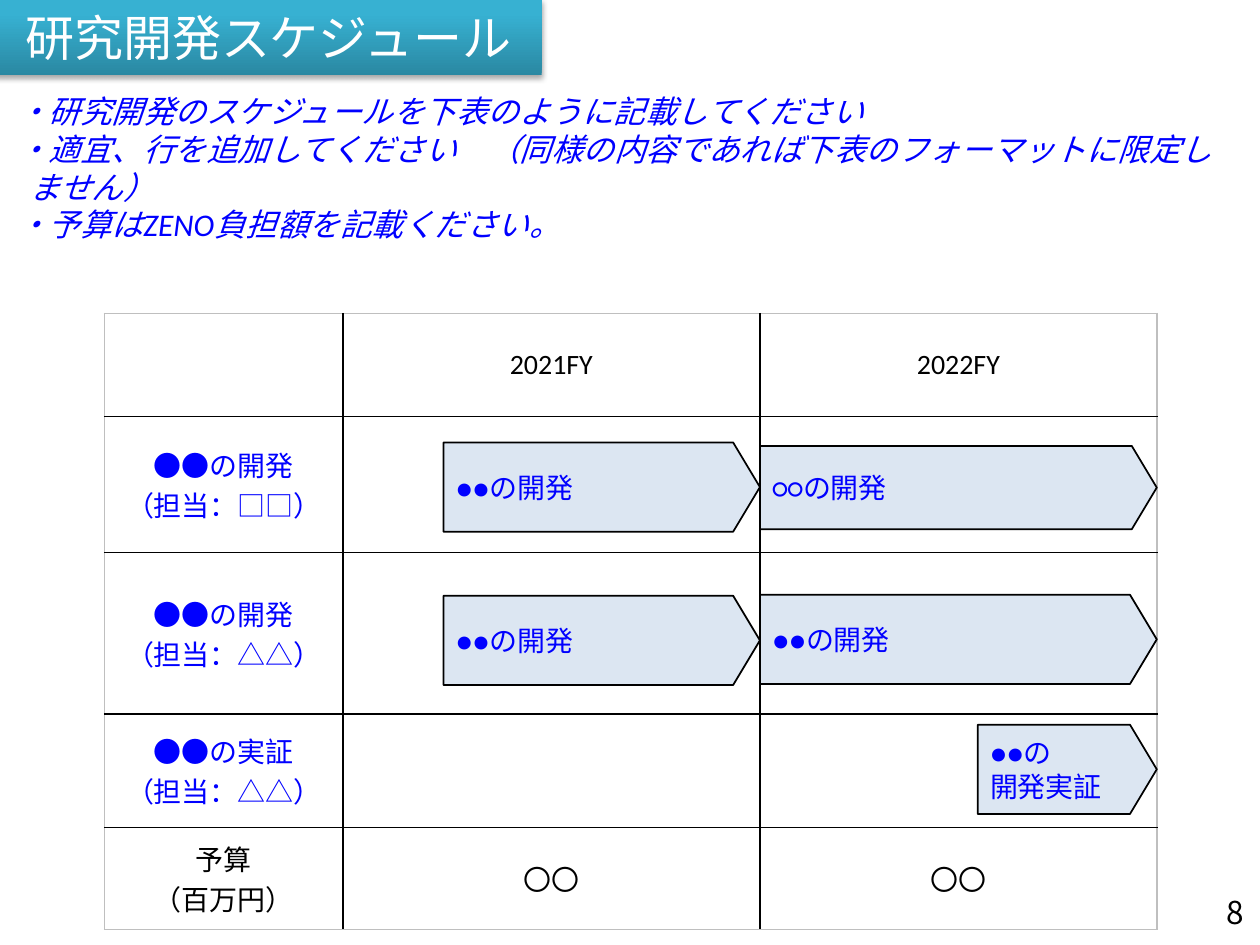
from dataclasses import dataclass
from itertools import accumulate

from lxml.etree import SubElement
from pptx import Presentation
from pptx.dml.color import RGBColor
from pptx.enum.shapes import MSO_SHAPE
from pptx.enum.text import MSO_ANCHOR, PP_ALIGN
from pptx.oxml.ns import qn
from pptx.util import Cm, Pt


@dataclass(frozen=True)
class Theme:
    latin: str = "Calibri"
    cjk: str = "Noto Sans CJK JP"
    black: str = "000000"
    white: str = "FFFFFF"
    blue: str = "0000FF"
    pale: str = "DCE6F2"
    frame: str = "BFBFBF"
    teal_dark: str = "2A88A2"
    teal: str = "37B1D2"
    title: int = 28
    body: int = 18
    cell: int = 16


T = Theme()
COLS = (4.8, 8.41, 8.0)
ROWS = (2.08, 2.74, 3.25, 2.29, 2.06)
CELLS = (
    ("", "2021FY", "2022FY"),
    ("●●の開発\n（担当：□□）", "", ""),
    ("●●の開発\n（担当：△△）", "", ""),
    ("●●の実証\n（担当：△△）", "", ""),
    ("予算\n（百万円）", "〇〇", "〇〇"),
)
# row, column, offset below the row top, width, height, text
TASKS = (
    (2, 2, 0.85, 8.0, 1.8, "●●の開発"),
    (1, 1, 0.52, 6.38, 1.8, "●●の開発"),
    (2, 1, 0.87, 6.38, 1.8, "●●の開発"),
    (3, 2, 0.22, 3.61, 1.8, "●●の\n開発実証"),
    (1, 2, 0.59, 8.0, 1.68, "○○の開発"),
)
NOTES = (
    "・研究開発のスケジュールを下表のように記載してください\n"
    "・適宜、行を追加してください　（同様の内容であれば下表のフォーマットに限定しません）\n"
    "・予算はZENO負担額を記載ください。"
)


def rgb(color):
    return RGBColor.from_string(color)


def write(tf, text, size, color, font=T.latin, align=PP_ALIGN.LEFT, hang=0, italic=None):
    tf.text = text
    for p in tf.paragraphs:
        p.alignment = align
        p.font.size = Pt(size)
        p.font.color.rgb = rgb(color)
        p.font.italic = italic
        p.font.name = font
        pPr = p._p.get_or_add_pPr()
        SubElement(pPr.get_or_add_defRPr(), qn("a:ea"), typeface=font)
        if hang:
            pPr.set("marL", str(Cm(hang)))
            pPr.set("indent", str(-Cm(hang)))


def add_title(s, x, y, w, h):
    sp = s.shapes.add_shape(MSO_SHAPE.RECTANGLE, Cm(x), Cm(y), Cm(w), Cm(h))
    sp.line.fill.background()
    sp.fill.gradient()
    sp.fill.gradient_angle = 90
    for stop, pos, color in zip(sp.fill.gradient_stops, (0, 0.8), (T.teal_dark, T.teal)):
        stop.position = pos
        stop.color.rgb = rgb(color)
    # Soft shadow below the banner
    sp.shadow.inherit = False
    effects = sp._element.spPr.find(qn("a:effectLst"))
    shadow = SubElement(effects, qn("a:outerShdw"), blurRad=str(Pt(3.1)),
                        dist=str(Pt(1.8)), dir="5400000", rotWithShape="0")
    color = SubElement(shadow, qn("a:srgbClr"), val=T.black)
    SubElement(color, qn("a:alpha"), val="35000")
    sp.text_frame.vertical_anchor = MSO_ANCHOR.MIDDLE
    write(sp.text_frame, "研究開発スケジュール", T.title, T.white, align=PP_ALIGN.CENTER)


def add_notes(s, x, y, w, h):
    tf = s.shapes.add_textbox(Cm(x), Cm(y), Cm(w), Cm(h)).text_frame
    tf.word_wrap = True
    write(tf, NOTES, T.body, T.blue, hang=0.25, italic=True)


def set_border(cell, side, color, width):
    ln = SubElement(cell._tc.get_or_add_tcPr(), qn(f"a:{side}"), w=str(Pt(width)))
    SubElement(SubElement(ln, qn("a:solidFill")), qn("a:srgbClr"), val=color)


def add_cell(cell, text, row, col):
    cell.margin_left = cell.margin_right = cell.margin_top = cell.margin_bottom = 0
    cell.vertical_anchor = MSO_ANCHOR.MIDDLE
    # Grey outer frame, black inner rules
    outer = {"lnL": col == 0, "lnR": col == len(COLS) - 1,
             "lnT": row == 0, "lnB": row == len(ROWS) - 1}
    for side, is_outer in outer.items():
        set_border(cell, side, T.frame if is_outer else T.black, 1)
    cell.fill.background()
    if text:
        is_task = col == 0 and row < len(ROWS) - 1
        write(cell.text_frame, text, T.cell, T.blue if is_task else T.black,
              T.latin if row == 0 else T.cjk, PP_ALIGN.CENTER)


def add_task(s, x, y, w, h, text):
    sp = s.shapes.add_shape(MSO_SHAPE.PENTAGON, Cm(x), Cm(y), Cm(w), Cm(h))
    sp.adjustments[0] = 0.3
    sp.shadow.inherit = False
    sp.fill.solid()
    sp.fill.fore_color.rgb = rgb(T.pale)
    sp.line.color.rgb = rgb(T.black)
    sp.line.width = Pt(1)
    sp.text_frame.vertical_anchor = MSO_ANCHOR.MIDDLE
    write(sp.text_frame, text, T.cell, T.blue, hang=0.25)


def add_schedule(s, x, y):
    # Grid
    table = s.shapes.add_table(len(ROWS), len(COLS), Cm(x), Cm(y),
                               Cm(sum(COLS)), Cm(sum(ROWS))).table
    table.first_row = table.horz_banding = False
    for column, width in zip(table.columns, COLS):
        column.width = Cm(width)
    for r, (row, height) in enumerate(zip(table.rows, ROWS)):
        row.height = Cm(height)
        for c, text in enumerate(CELLS[r]):
            add_cell(table.cell(r, c), text, r, c)
    # Task arrows end at the right edge of their column
    rights = list(accumulate(COLS))
    tops = list(accumulate(ROWS, initial=0))
    for row, col, offset, w, h, text in TASKS:
        add_task(s, x + rights[col] - w, y + tops[row] + offset, w, h, text)


def add_page_number(s, x, y, w, h):
    tf = s.shapes.add_textbox(Cm(x), Cm(y), Cm(w), Cm(h)).text_frame
    tf.margin_left = tf.margin_right = tf.margin_top = tf.margin_bottom = 0
    tf.vertical_anchor = MSO_ANCHOR.MIDDLE
    tf.word_wrap = True
    write(tf, "8", T.body, T.black, T.cjk, PP_ALIGN.RIGHT)


def main():
    prs = Presentation()
    prs.slide_width, prs.slide_height = Cm(25.4), Cm(19.05)
    s = prs.slides.add_slide(prs.slide_layouts[6])
    add_title(s, -0.1, -0.03, 11.02, 1.55)
    add_schedule(s, 2.11, 6.32)
    add_page_number(s, 23.6, 18.06, 1.47, 0.64)
    add_notes(s, 0.1, 1.73, 24.97, 2.57)
    prs.save("out.pptx")


if __name__ == "__main__":
    main()
